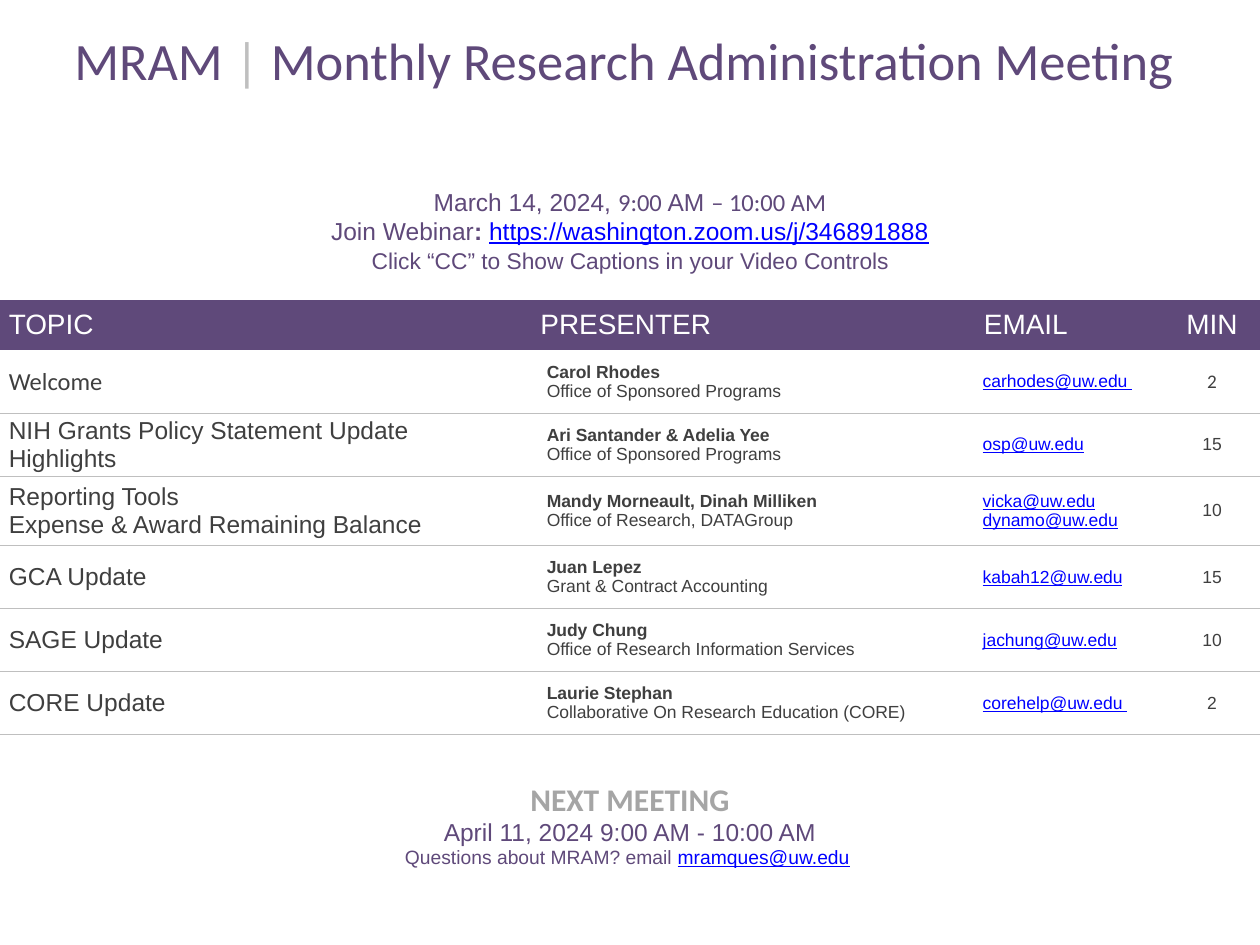
import pptx
import pptx.dml.color
import pptx.enum.text
import pptx.oxml
import pptx.oxml.ns
import pptx.util

Inches = pptx.util.Inches
Pt = pptx.util.Pt
RGBColor = pptx.dml.color.RGBColor
ALIGN = pptx.enum.text.PP_ALIGN
ANCHOR = pptx.enum.text.MSO_ANCHOR

PURPLE = RGBColor(0x5F, 0x49, 0x7A)
WHITE = RGBColor(0xFF, 0xFF, 0xFF)
DARK = RGBColor(0x3F, 0x3F, 0x3F)
RULE = RGBColor(0xBF, 0xBF, 0xBF)
GREY = RGBColor(0xA5, 0xA5, 0xA5)
BLUE = RGBColor(0x00, 0x00, 0xFF)

NO_GRID_STYLE = "{2D5ABB26-0587-4C30-8999-92F81FD0307C}"
COLUMNS = [4.22, 3.46, 1.56, 0.76]
ROWS = [0.75, 1.63, 0.4, 0.5, 0.5, 0.55, 0.5, 0.5, 0.5, 1.66]
HEADINGS = ["TOPIC", "PRESENTER", "EMAIL", "MIN"]

AGENDA = [
    (["Welcome"], "Carol Rhodes", "Office of Sponsored Programs",
     ["carhodes@uw.edu "], "2"),
    (["NIH Grants Policy Statement Update Highlights"],
     "Ari Santander & Adelia Yee", "Office of Sponsored Programs",
     ["osp@uw.edu"], "15"),
    (["Reporting Tools", "Expense & Award Remaining Balance"],
     "Mandy Morneault, Dinah Milliken", "Office of Research, DATAGroup",
     ["vicka@uw.edu", "dynamo@uw.edu"], "10"),
    (["GCA Update"], "Juan Lepez", "Grant & Contract Accounting",
     ["kabah12@uw.edu"], "15"),
    (["SAGE Update"], "Judy Chung", "Office of Research Information Services",
     ["jachung@uw.edu"], "10"),
    (["CORE Update"], "Laurie Stephan",
     "Collaborative On Research Education (CORE)",
     ["corehelp@uw.edu "], "2"),
]


def style(size, color, name="Arial", **extra):
    return {"size": Pt(size), "name": name, "color": color, **extra}


def link(size):
    return style(size, BLUE, underline=True)


def write_span(para, text, values):
    span = para.add_run()
    span.text = text
    for key, value in values.items():
        if key == "color":
            span.font.color.rgb = value
        else:
            setattr(span.font, key, value)


def fill_cell(cell, lines, fill=WHITE, align=ALIGN.LEFT, **layout):
    box_values = {"margin_left": Inches(0.07), "margin_right": Inches(0.07),
                  "margin_top": 0, "margin_bottom": 0,
                  "vertical_anchor": ANCHOR.MIDDLE, **layout}
    for key, value in box_values.items():
        setattr(cell, key, value)
    cell.fill.solid()
    cell.fill.fore_color.rgb = fill
    for index, spans in enumerate(lines):
        frame = cell.text_frame
        para = frame.add_paragraph() if index else frame.paragraphs[0]
        para.alignment = align
        for text, values in spans:
            write_span(para, text, values)


def rule_below(cell):
    border = pptx.oxml.parse_xml(
        f'<a:lnB {pptx.oxml.ns.nsdecls("a")} w="{Pt(1)}"><a:solidFill>'
        f'<a:srgbClr val="{RULE}"/></a:solidFill></a:lnB>')
    cell._tc.get_or_add_tcPr().insert(0, border)


def add_grid(page, left, top):
    frame = page.shapes.add_table(len(ROWS), len(COLUMNS), left, top,
                                  Inches(sum(COLUMNS)), Inches(sum(ROWS)))
    grid = frame.table
    grid.first_row = grid.horz_banding = False
    grid._tbl.tblPr.find(pptx.oxml.ns.qn("a:tableStyleId")).text = NO_GRID_STYLE
    for column, width in zip(grid.columns, COLUMNS):
        column.width = Inches(width)
    for row, height in zip(grid.rows, ROWS):
        row.height = Inches(height)
    return grid


def merge_row(grid, row):
    cell = grid.cell(row, 0)
    cell.merge(grid.cell(row, len(COLUMNS) - 1))
    return cell


def fill_title(cell):
    title = style(30, PURPLE, "Calibri")
    spans = [("MRAM ", title), ("|", {**title, "color": RULE}),
             (" Monthly Research Administration Meeting ", title)]
    fill_cell(cell, [spans], align=ALIGN.CENTER, vertical_anchor=ANCHOR.BOTTOM)


def fill_details(cell):
    arial, calibri = style(14, PURPLE), style(14, PURPLE, "Calibri")
    lines = [
        [("March 14, 2024, ", arial), ("9:00 ", calibri), ("AM ", arial),
         ("– 10:00 AM", calibri)],
        [("Join Webinar", arial), (": ", {**arial, "bold": True}),
         ("https://washington.zoom.us/j/346891888", link(14))],
        [("Click “CC” to Show Captions in your Video Controls",
          style(13, PURPLE))],
    ]
    fill_cell(cell, lines, align=ALIGN.CENTER, vertical_anchor=ANCHOR.BOTTOM,
              margin_bottom=Inches(0.2))
    cell.text_frame.paragraphs[-1].line_spacing = 1.15


def fill_headings(cells):
    lefts = [0.07, 0.07, 0.13, 0.07]
    aligns = [ALIGN.LEFT] * 3 + [ALIGN.CENTER]
    for cell, text, left, align in zip(cells, HEADINGS, lefts, aligns):
        fill_cell(cell, [[(text, style(16, WHITE))]], PURPLE, align,
                  margin_left=Inches(left))


def fill_agenda_row(cells, entry, topic_style, minutes_style):
    topics, presenter, office, emails, minutes = entry
    topic_cell, presenter_cell, email_cell, minutes_cell = cells
    inset = {"margin_left": Inches(0.12), "margin_right": Inches(0.12)}
    fill_cell(topic_cell, [[(text, topic_style)] for text in topics])
    fill_cell(presenter_cell,
              [[(presenter, style(10, DARK, bold=True))],
               [(office, style(10, DARK))]], **inset)
    fill_cell(email_cell, [[(text, link(10))] for text in emails], **inset)
    fill_cell(minutes_cell, [[(minutes, minutes_style)]], align=ALIGN.CENTER)
    for cell in cells:
        rule_below(cell)


def fill_next_meeting(cell):
    lines = [
        [("NEXT MEETING", style(18, GREY, "Calibri", bold=True))],
        [("April 11, 2024 9:00 AM - 10:00 AM", style(14, PURPLE))],
        [("Questions about MRAM? email ", style(11, PURPLE)),
         ("mramques@uw.edu", link(11)), (" ", style(11, PURPLE))],
    ]
    fill_cell(cell, lines, align=ALIGN.CENTER, vertical_anchor=ANCHOR.TOP,
              margin_top=Inches(0.37))


def main():
    deck = pptx.Presentation()
    deck.slide_width, deck.slide_height = Inches(10), Inches(7.5)
    page = deck.slides.add_slide(deck.slide_layouts[6])
    grid = add_grid(page, Inches(0), Inches(0))
    fill_title(merge_row(grid, 0))
    fill_details(merge_row(grid, 1))
    fill_headings(grid.rows[2].cells)
    for index, entry in enumerate(AGENDA):
        font = "Arial" if index else "Calibri"
        fill_agenda_row(list(grid.rows[3 + index].cells), entry,
                        style(14, DARK, font),
                        style(10 if index else 11, DARK, font))
    fill_next_meeting(merge_row(grid, len(ROWS) - 1))
    deck.save("out.pptx")


if __name__ == "__main__":
    main()
